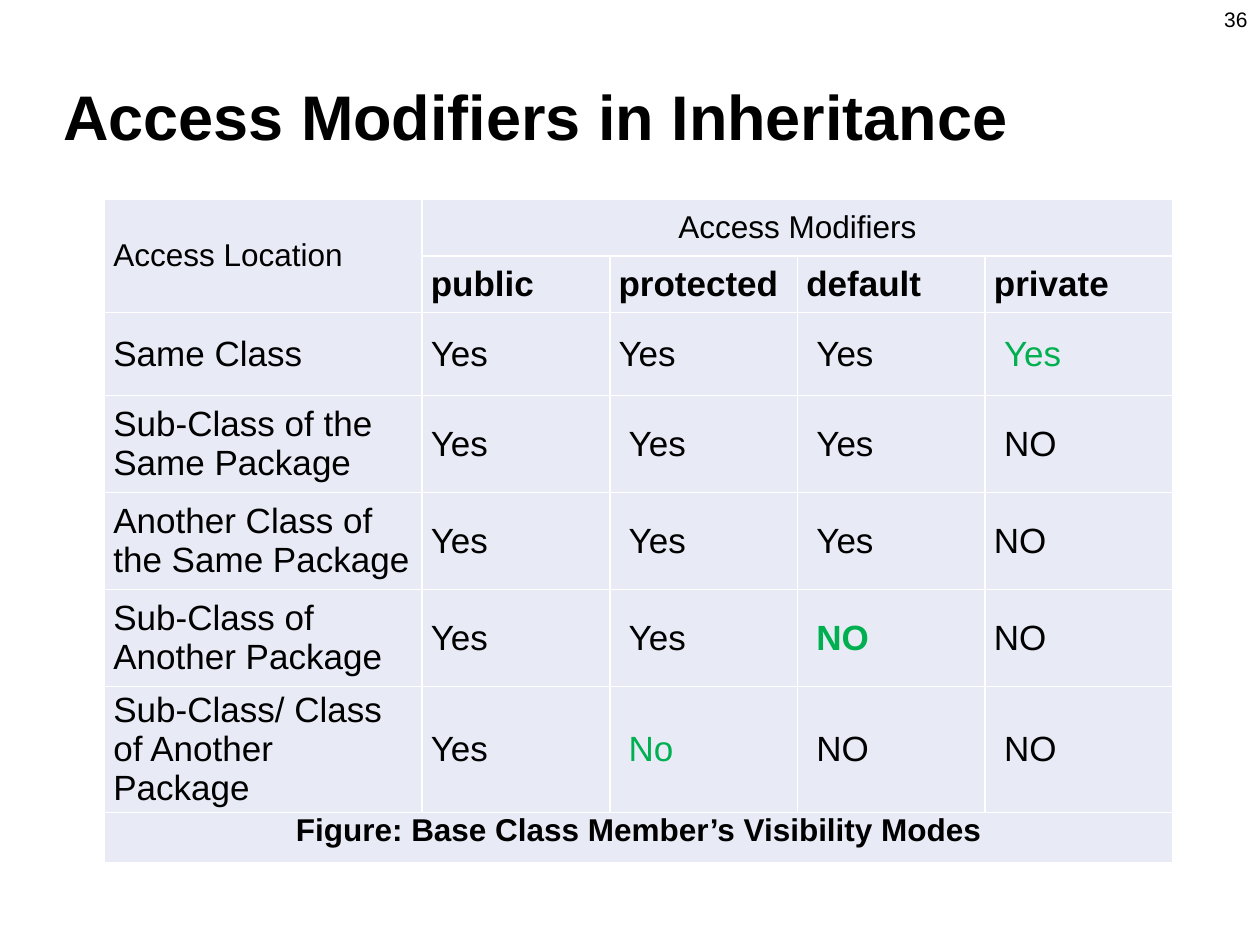
"""Build the slide on access modifiers in inheritance."""
import dataclasses

import lxml.etree
import pptx
import pptx.dml.color
import pptx.enum.text
import pptx.oxml.ns
import pptx.util

Inches = pptx.util.Inches
Align = pptx.enum.text.PP_ALIGN
Anchor = pptx.enum.text.MSO_ANCHOR
BLACK, GREEN, WHITE, PALE = "000000", "00B050", "FFFFFF", "E8EBF5"
PAD, SHIFT = 0.07, 0.08
COLS = [2.52] + [1.49] * 4
ROWS = [0.45, 0.45, 0.66, 0.77, 0.77, 0.77, 0.9, 0.4]


@dataclasses.dataclass
class Cell:
    """Hold the text and look of one table cell."""
    text: str
    size: int = 20
    bold: bool = False
    color: str = BLACK
    align: Align = Align.LEFT
    inset: float = PAD
    anchor: Anchor = Anchor.MIDDLE


def head(text: str) -> Cell:
    """Describe a bold column head."""
    return Cell(text, bold=True, align=Align.JUSTIFY)


def shift(text: str, color: str = BLACK, bold: bool = False) -> Cell:
    """Describe an answer set in slightly from the left."""
    return Cell(text, bold=bold, color=color, inset=PAD + SHIFT)


YES, NO = Cell("Yes"), Cell("NO")
YES_IN, NO_IN = shift("Yes"), shift("NO")
GRID = [
    [Cell("Access Location", 18, align=Align.JUSTIFY),
     Cell("Access Modifiers", 18, align=Align.CENTER)],
    [None, head("public"), head("protected"), head("default"), head("private")],
    [Cell("Same Class"), YES, YES, YES_IN, shift("Yes", GREEN)],
    [Cell("Sub-Class of the Same Package"), YES, YES_IN, YES_IN, NO_IN],
    [Cell("Another Class of the Same Package"), YES, YES_IN, YES_IN, NO],
    [Cell("Sub-Class of Another Package"), YES, YES_IN,
     shift("NO", GREEN, True), NO],
    [Cell("Sub-Class/ Class of Another Package"), YES, shift("No", GREEN),
     NO_IN, NO_IN],
    [Cell("Figure: Base Class Member’s Visibility Modes", 18, True,
          align=Align.CENTER, anchor=Anchor.TOP)],
]


def rgb(code: str) -> pptx.dml.color.RGBColor:
    """Turn a hex string into a colour."""
    return pptx.dml.color.RGBColor.from_string(code)


def write(frame, text: str, size: int, bold: bool, color: str, align: Align):
    """Put one styled paragraph in a text frame and return it."""
    para = frame.paragraphs[0]
    para.text = text
    para.alignment = align
    font = para.font
    font.name, font.size, font.bold = "Arial", pptx.util.Pt(size), bold
    font.color.rgb = rgb(color)
    return para


def place(shape, left: float, top: float, width: float, height: float) -> None:
    """Set the place and size of a shape."""
    shape.left, shape.top = Inches(left), Inches(top)
    shape.width, shape.height = Inches(width), Inches(height)


def edge(cell) -> None:
    """Give a cell thin white borders and a pale fill."""
    props = cell._tc.get_or_add_tcPr()
    qn = pptx.oxml.ns.qn
    for side in ("a:lnL", "a:lnR", "a:lnT", "a:lnB"):
        line = lxml.etree.SubElement(props, qn(side), w=str(pptx.util.Pt(1)))
        fill = lxml.etree.SubElement(line, qn("a:solidFill"))
        lxml.etree.SubElement(fill, qn("a:srgbClr"), val=WHITE)
    cell.fill.solid()
    cell.fill.fore_color.rgb = rgb(PALE)


def draw(cell, item: Cell) -> None:
    """Write one described cell into the table."""
    cell.margin_left, cell.margin_right = Inches(item.inset), Inches(PAD)
    cell.vertical_anchor = item.anchor
    write(cell.text_frame, item.text, item.size, item.bold, item.color, item.align)


def build(slide) -> None:
    """Add the table of access rules."""
    table = slide.shapes.add_table(
        len(ROWS), len(COLS), Inches(0.83), Inches(1.58),
        Inches(sum(COLS)), Inches(sum(ROWS))).table
    table.first_row = table.horz_banding = False
    for col, width in zip(table.columns, COLS):
        col.width = Inches(width)
    for row, height in zip(table.rows, ROWS):
        row.height = Inches(height)
    for cell in table.iter_cells():
        cell.margin_top = cell.margin_bottom = 0
        edge(cell)
    table.cell(0, 0).merge(table.cell(1, 0))
    table.cell(0, 1).merge(table.cell(0, 4))
    table.cell(7, 0).merge(table.cell(7, 4))
    for r, line in enumerate(GRID):
        for c, item in enumerate(line):
            if item:
                draw(table.cell(r, c), item)


def main() -> None:
    """Make the slide and save it."""
    deck = pptx.Presentation()
    deck.slide_width, deck.slide_height = Inches(10), Inches(7.5)
    slide = deck.slides.add_slide(deck.slide_layouts[5])
    title = slide.shapes.title
    place(title, 0.4, 0.56, 9.21, 0.84)
    frame = title.text_frame
    frame.auto_size = pptx.enum.text.MSO_AUTO_SIZE.NONE
    frame.vertical_anchor = Anchor.MIDDLE
    frame.margin_top = 0
    para = write(frame, "Access Modifiers in Inheritance", 36, True, BLACK, Align.LEFT)
    para.line_spacing = 0.9
    page = slide.shapes.add_textbox(
        Inches(7.67), Inches(0), Inches(2.33), Inches(0.52))
    page.text_frame.word_wrap = True
    write(page.text_frame, "36", 12, False, BLACK, Align.RIGHT)
    build(slide)
    deck.save("out.pptx")


if __name__ == "__main__":
    main()
